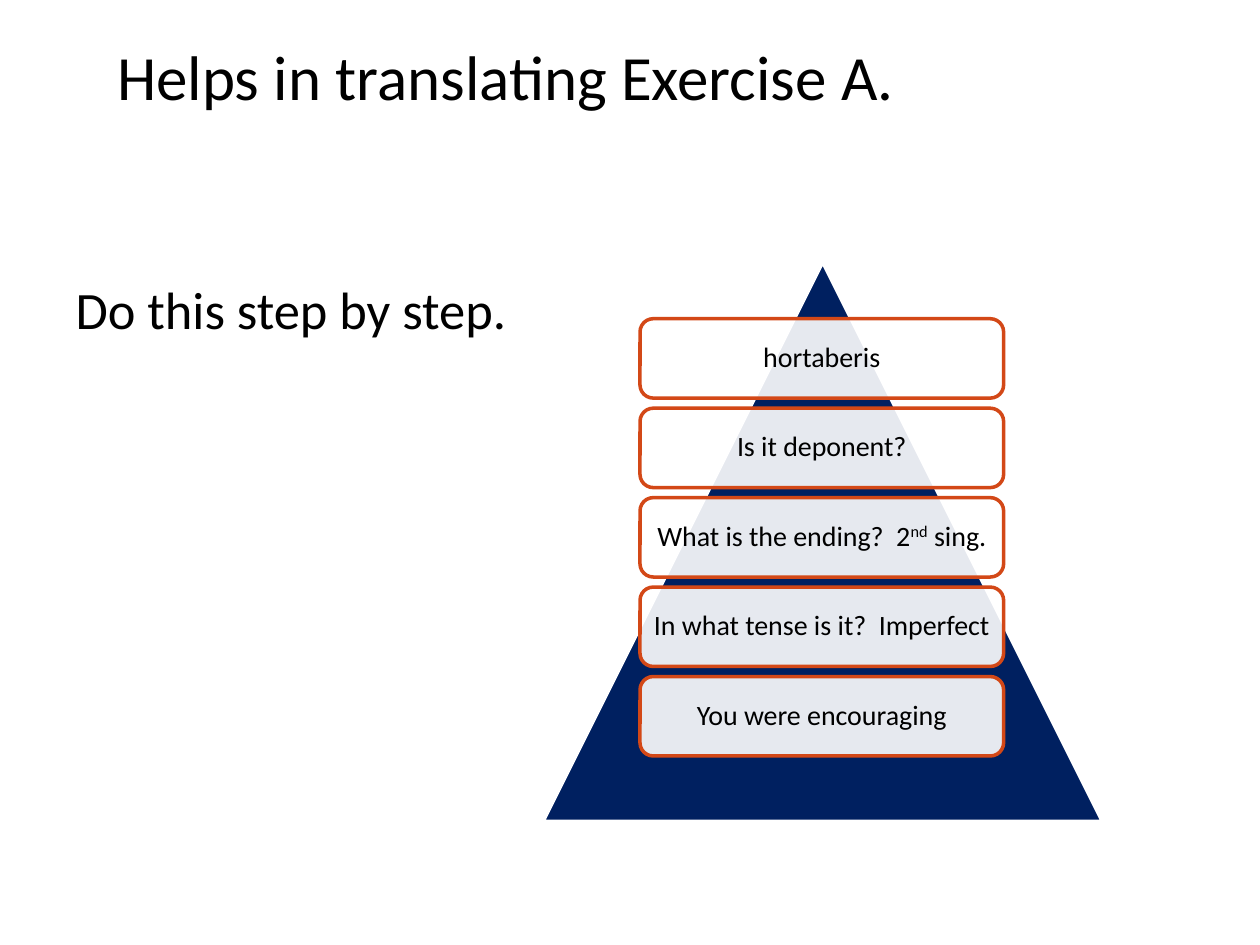
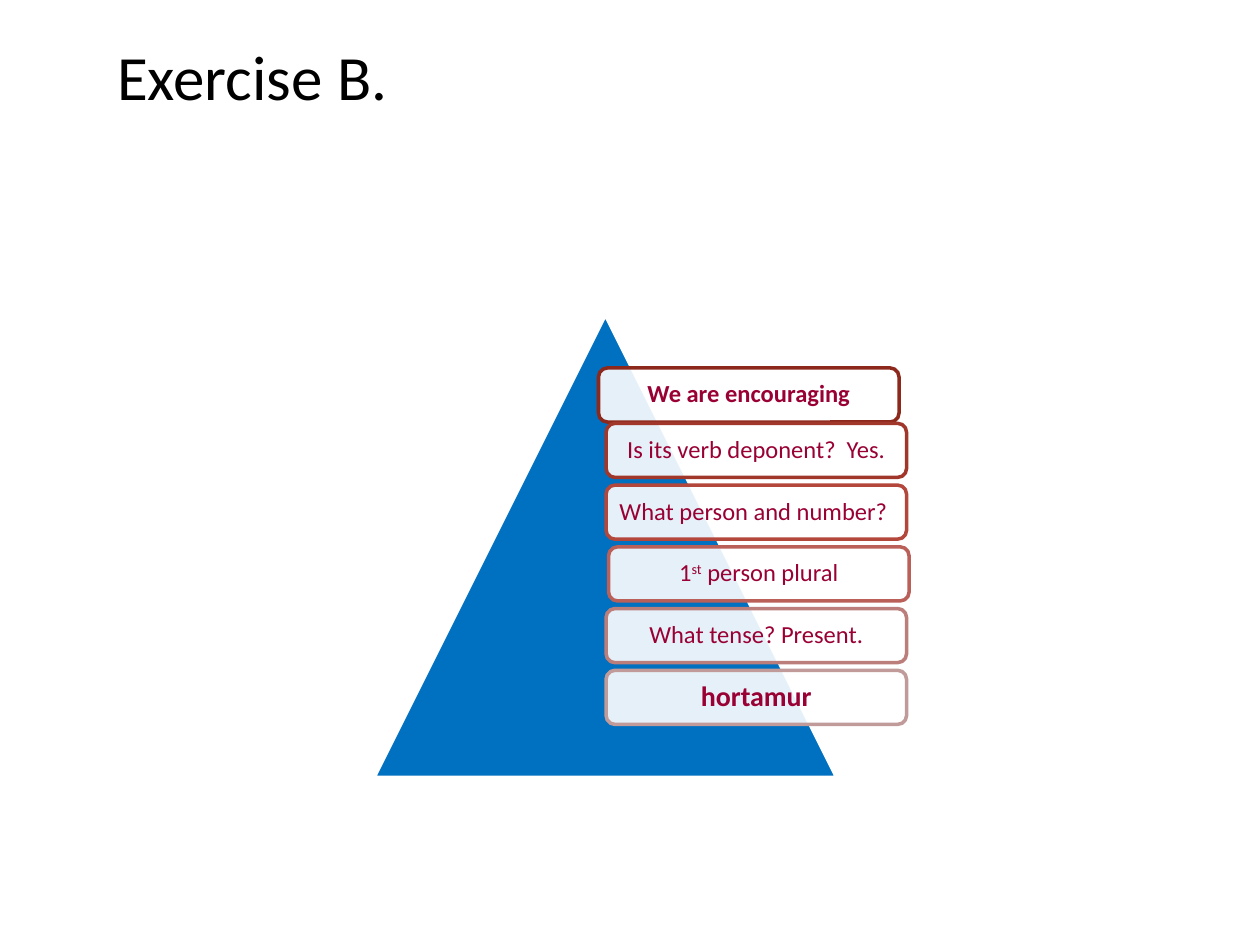
from dataclasses import dataclass

from lxml.etree import SubElement
from pptx import Presentation
from pptx.dml.color import RGBColor
from pptx.enum.shapes import MSO_SHAPE as Shape
from pptx.enum.text import MSO_ANCHOR as Anchor, MSO_AUTO_SIZE as Fit, PP_ALIGN as Align
from pptx.oxml.ns import qn
from pptx.util import Inches, Pt

FACE = "Calibri"
WHITE = RGBColor(0xFF, 0xFF, 0xFF)
BLACK = RGBColor(0, 0, 0)
NAVY = RGBColor(0x00, 0x20, 0x60)
BLUE = RGBColor(0x00, 0x70, 0xC0)
WINE = RGBColor(0x99, 0x00, 0x33)
ORANGE = RGBColor(0xD3, 0x48, 0x17)
REDS = [RGBColor.from_string(tone) for tone in
        ("8D291C", "A1372B", "B3473C", "BA6059", "BB7E7B", "C09B99")]


@dataclass
class Step:
    """One box of a pyramid: (text, raised) pieces, look and nudge in inches."""
    words: list
    edge: RGBColor
    size: int
    bold: bool = False
    dx: float = 0
    dy: float = 0


@dataclass
class Stack:
    """Where the column of boxes sits, relative to the pyramid."""
    left: float
    top: float
    height: float
    pitch: float
    inset: float


def style(para, size, color, bold=False):
    """Set the font of a paragraph."""
    font = para.font
    font.name, font.size, font.bold = FACE, Pt(size), bold
    font.color.rgb = color


def place(holder, box, text, size, anchor):
    """Move a placeholder to its box and give it one plain left line."""
    holder.left, holder.top, holder.width, holder.height = map(Inches, box)
    frame = holder.text_frame
    frame.text = text
    frame.auto_size, frame.vertical_anchor = Fit.NONE, anchor
    para = frame.paragraphs[0]
    para.alignment, para.space_before = Align.LEFT, Pt(0)
    props = para._p.get_or_add_pPr()
    props.set("marL", "0")
    props.set("indent", "0")
    SubElement(props, qn("a:buNone"))
    style(para, size, BLACK)


def head(slide, text):
    """Fill the slide title."""
    place(slide.shapes.title, (0.83, 0.25, 7.25, 0.71), text, 36, Anchor.TOP)


def draw(slide, kind, box, fill, edge):
    """Add a filled preset shape with a 2 pt edge and no shadow."""
    shape = slide.shapes.add_shape(kind, *map(Inches, box))
    shape.shadow.inherit = False
    shape.fill.solid()
    shape.fill.fore_color.rgb = fill
    shape.line.color.rgb = edge
    shape.line.width = Pt(2)
    return shape


def label(slide, box, step, ink, inset):
    """Add one see-through rounded box with its centred text."""
    shape = draw(slide, Shape.ROUNDED_RECTANGLE, box, WHITE, step.edge)
    tint = shape._element.spPr.find(qn("a:solidFill"))[0]
    SubElement(tint, qn("a:alpha")).set("val", "90000")
    frame = shape.text_frame
    frame.word_wrap, frame.vertical_anchor = True, Anchor.MIDDLE
    frame.margin_left = frame.margin_right = Inches(0.05)
    frame.margin_top = frame.margin_bottom = Inches(inset)
    para = frame.paragraphs[0]
    para.alignment, para.line_spacing = Align.CENTER, 0.9
    style(para, step.size, ink, step.bold)
    for text, raised in step.words:
        run = para.add_run()
        run.text = text
        if raised:
            run._r.get_or_add_rPr().set("baseline", "30000")


def tower(slide, left, top, side, fill, ink, stack, steps):
    """Draw a pyramid and the evenly spaced steps laid over it."""
    draw(slide, Shape.ISOSCELES_TRIANGLE, (left, top, side, side), fill, WHITE)
    for row, step in enumerate(steps):
        box = (left + stack.left + step.dx,
               top + stack.top + row * stack.pitch + step.dy,
               0.65 * side, stack.height)
        label(slide, box, step, ink, stack.inset)


def first(deck):
    """Build the slide for Exercise A."""
    slide = deck.slides.add_slide(deck.slide_layouts[1])
    head(slide, "Helps in translating Exercise A.")
    place(slide.placeholders[1], (0.5, 1.5, 8.5, 1.25),
          "Do this step by step.", 30, Anchor.BOTTOM)
    lines = [
        [("hortaberis", False)],
        [("Is it deponent?", False)],
        [("What is the ending?  2", False), ("nd", True), (" sing.", False)],
        [("In what tense is it?  Imperfect", False)],
        [("You were encouraging", False)],
    ]
    steps = [Step(words, ORANGE, 16) for words in lines]
    tower(slide, 4.31, 2.08, 4.44, NAVY, BLACK,
          Stack(0.77, 0.45, 0.63, 0.71, 0.07), steps)


def second(deck):
    """Build the slide for Exercise B."""
    slide = deck.slides.add_slide(deck.slide_layouts[5])
    head(slide, "Exercise B.")
    lines = [
        [("We are encouraging", False)],
        [("Is its verb deponent?  Yes.", False)],
        [("What person and number? ", False)],
        [("1", False), ("st", True), (" person plural", False)],
        [("What tense? Present.", False)],
        [("hortamur", False)],
    ]
    steps = [Step(words, edge, 14) for words, edge in zip(lines, REDS)]
    steps[0].bold = steps[-1].bold = True
    steps[-1].size = 16
    steps[0].dx, steps[0].dy = -0.06, 0.05
    steps[3].dx = 0.02
    tower(slide, 2.97, 2.5, 3.67, BLUE, WINE,
          Stack(1.84, 0.37, 0.43, 0.49, 0.06), steps)


def main():
    """Build and save both slides."""
    deck = Presentation()
    deck.slide_width, deck.slide_height = Inches(10), Inches(7.5)
    first(deck)
    second(deck)
    deck.save("out.pptx")


if __name__ == "__main__":
    main()
